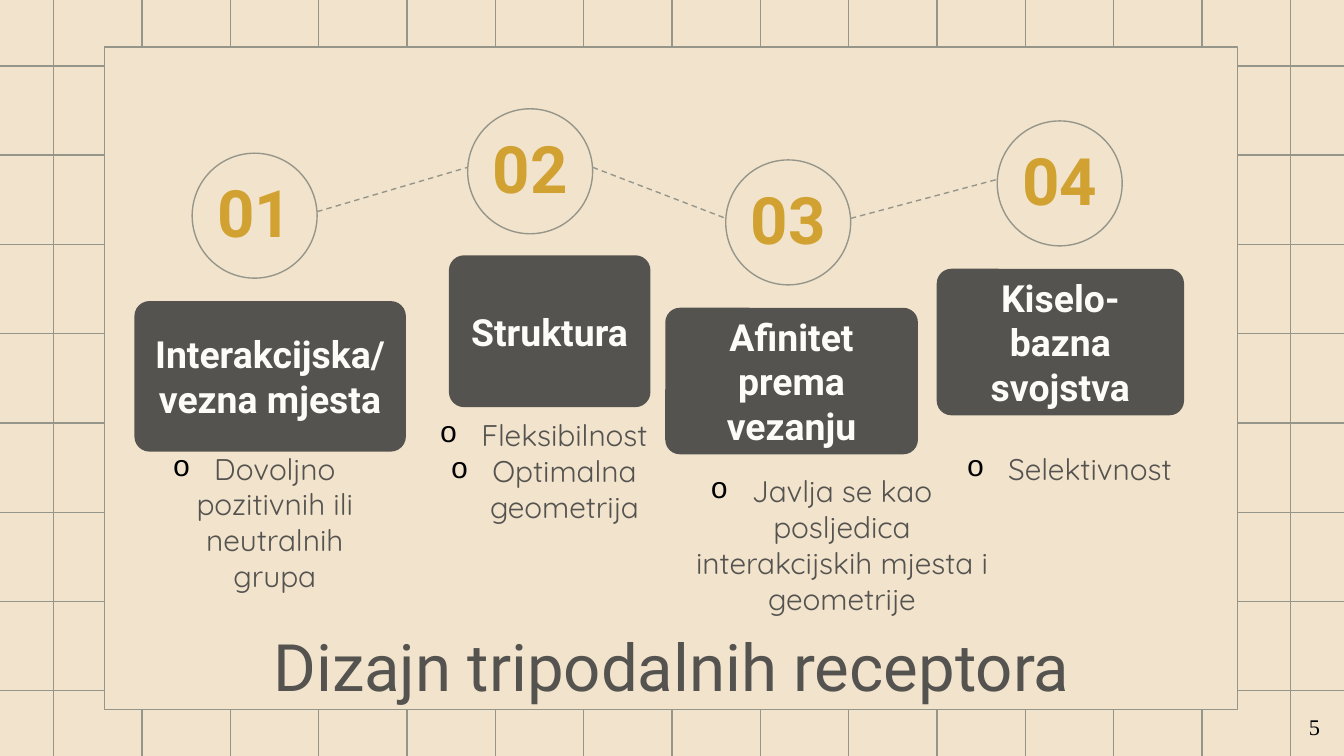
"""Build the slide on the design of tripodal receptors."""
from dataclasses import dataclass
from itertools import pairwise

from lxml.etree import SubElement
from pptx import Presentation
from pptx.dml.color import RGBColor
from pptx.enum.dml import MSO_LINE
from pptx.enum.shapes import MSO_CONNECTOR, MSO_SHAPE
from pptx.enum.text import MSO_ANCHOR, PP_ALIGN
from pptx.oxml.ns import qn
from pptx.util import Inches, Pt


@dataclass(frozen=True)
class Theme:
    paper: str = "F1E3CC"
    rule: str = "969589"
    dark: str = "55534F"
    light: str = "FDFCF9"
    gold: str = "D1A232"
    black: str = "000000"
    heading_font: str = "Roboto"
    body_font: str = "Quicksand"
    number_font: str = "Times New Roman"
    bullet_font: str = "Courier New"
    title_size: int = 35
    card_size: int = 20
    body_size: int = 16
    page_size: int = 12


THEME = Theme()
TITLE = "Dizajn tripodalnih receptora"
PAGE_NUMBER = "5"
STEPS = [
    {"number": "01", "circle": (1.43, 1.14), "heading": "Interakcijska/vezna mjesta",
     "card": (1, 2.24, 2.02, 1.12), "notes": ["Dovoljno pozitivnih ili neutralnih grupa"],
     "notes_area": (0.97, 3.25, 1.84, 1.71)},
    {"number": "02", "circle": (3.48, 0.81), "heading": "Struktura",
     "card": (3.34, 1.9, 1.5, 1.13), "notes": ["Fleksibilnost", "Optimalna geometrija"],
     "notes_area": (3.09, 3, 1.91, 1.79)},
    {"number": "03", "circle": (5.4, 1.19), "heading": "Afinitet prema vezanju",
     "card": (4.95, 2.29, 1.88, 1.09),
     "notes": ["Javlja se kao posljedica interakcijskih mjesta i geometrije"],
     "notes_area": (4.7, 3.42, 2.82, 1.79)},
    {"number": "04", "circle": (7.42, 0.9), "heading": "Kiselo-bazna svojstva",
     "card": (6.97, 2, 1.84, 1.09), "notes": ["Selektivnost"],
     "notes_area": (6.97, 3.25, 1.97, 1.79)},
]
CIRCLE_SIZE = 0.93
NUMBER_HEIGHT = 0.73
NUMBER_DROP = 0.07
LEFT_SITE, RIGHT_SITE = 1, 3


def color(value):
    return RGBColor.from_string(value)


def spread(first, last, count):
    return [first + (last - first) * index / (count - 1) for index in range(count)]


def style_line(line):
    line.color.rgb = color(THEME.rule)
    line.width = Pt(0.75)


def add_rule(page, start, end):
    rule = page.shapes.add_connector(
        MSO_CONNECTOR.STRAIGHT, *(Inches(value) for value in (*start, *end)))
    style_line(rule.line)
    SubElement(rule._element.spPr, qn("a:effectLst"))
    return rule


def add_shape(page, kind, area, fill=None, outlined=True):
    shape = page.shapes.add_shape(kind, *map(Inches, area))
    shape.shadow.inherit = False
    if fill:
        shape.fill.solid()
        shape.fill.fore_color.rgb = color(fill)
    else:
        shape.fill.background()
    if outlined:
        style_line(shape.line)
    else:
        shape.line.fill.background()
    return shape


def write(box, lines, font, size, ink, bold=False, anchor=MSO_ANCHOR.TOP,
          align=PP_ALIGN.CENTER, wrap=True):
    frame = box.text_frame
    frame.text = "\n".join(lines)
    frame.word_wrap = wrap
    frame.vertical_anchor = anchor
    frame.margin_left = frame.margin_right = Inches(0.1)
    frame.margin_top = frame.margin_bottom = Inches(0.1 if wrap else 0.05)
    for paragraph in frame.paragraphs:
        paragraph.alignment = align
        for span in paragraph.runs:
            span.font.name = font
            span.font.size = Pt(size)
            span.font.bold = bold
            span.font.color.rgb = color(ink)


def add_text(page, area, *args, **options):
    box = page.shapes.add_textbox(*map(Inches, area))
    write(box, *args, **options)
    return box


def add_bullets(box):
    for paragraph in box.text_frame.paragraphs:
        properties = paragraph._p.get_or_add_pPr()
        properties.set("marL", str(Inches(0.31)))
        properties.set("indent", str(-Inches(0.31)))
        bullet_color = SubElement(properties, qn("a:buClr"))
        SubElement(bullet_color, qn("a:srgbClr"), val=THEME.black)
        SubElement(properties, qn("a:buFont"), typeface=THEME.bullet_font)
        SubElement(properties, qn("a:buChar"), char="o")


def add_backdrop(page):
    page.background.fill.solid()
    page.background.fill.fore_color.rgb = color(THEME.paper)
    for x in spread(0.4, 9.6, 15):
        add_rule(page, (x, -0.04), (x, 5.67))
    for y in spread(0.49, 5.14, 8):
        add_rule(page, (0, y), (10, y))
    add_shape(page, MSO_SHAPE.RECTANGLE, (0.78, 0.35, 8.43, 4.93), THEME.paper)


def add_title(page):
    title = page.shapes.title
    title.left, title.top, title.width, title.height = map(Inches, (0.78, 4.56, 8.44, 0.65))
    write(title, [TITLE], THEME.heading_font, THEME.title_size, THEME.dark)
    page.shapes._spTree.append(title._element)


def add_step(page, step):
    left, top = step["circle"]
    add_shape(page, MSO_SHAPE.OVAL, (left, top, CIRCLE_SIZE, CIRCLE_SIZE))
    number = add_text(page, (left, top + NUMBER_DROP, CIRCLE_SIZE, NUMBER_HEIGHT),
                      [step["number"]], THEME.heading_font, THEME.title_size, THEME.gold,
                      bold=True, anchor=MSO_ANCHOR.MIDDLE)
    notes = add_text(page, step["notes_area"], step["notes"],
                     THEME.body_font, THEME.body_size, THEME.dark)
    add_bullets(notes)
    card = add_shape(page, MSO_SHAPE.ROUNDED_RECTANGLE, step["card"], THEME.dark, outlined=False)
    card.adjustments[0] = 0.1
    write(card, [step["heading"]], THEME.heading_font, THEME.card_size, THEME.light,
          bold=True, anchor=MSO_ANCHOR.MIDDLE)
    return number


def main():
    deck = Presentation()
    deck.slide_width = Inches(10)
    deck.slide_height = deck.slide_width * 9 // 16
    page = deck.slides.add_slide(deck.slide_layouts[5])
    add_backdrop(page)
    add_title(page)
    numbers = [add_step(page, step) for step in STEPS]
    for before, after in pairwise(numbers):
        link = add_rule(page, (0, 0), (1, 1))
        link.begin_connect(before, RIGHT_SITE)
        link.end_connect(after, LEFT_SITE)
        link.line.dash_style = MSO_LINE.DASH
    add_text(page, (9.64, 5.26, 0.29, 0.3), [PAGE_NUMBER], THEME.number_font,
             THEME.page_size, THEME.black, align=PP_ALIGN.LEFT, wrap=False)
    deck.save("out.pptx")


if __name__ == "__main__":
    main()
